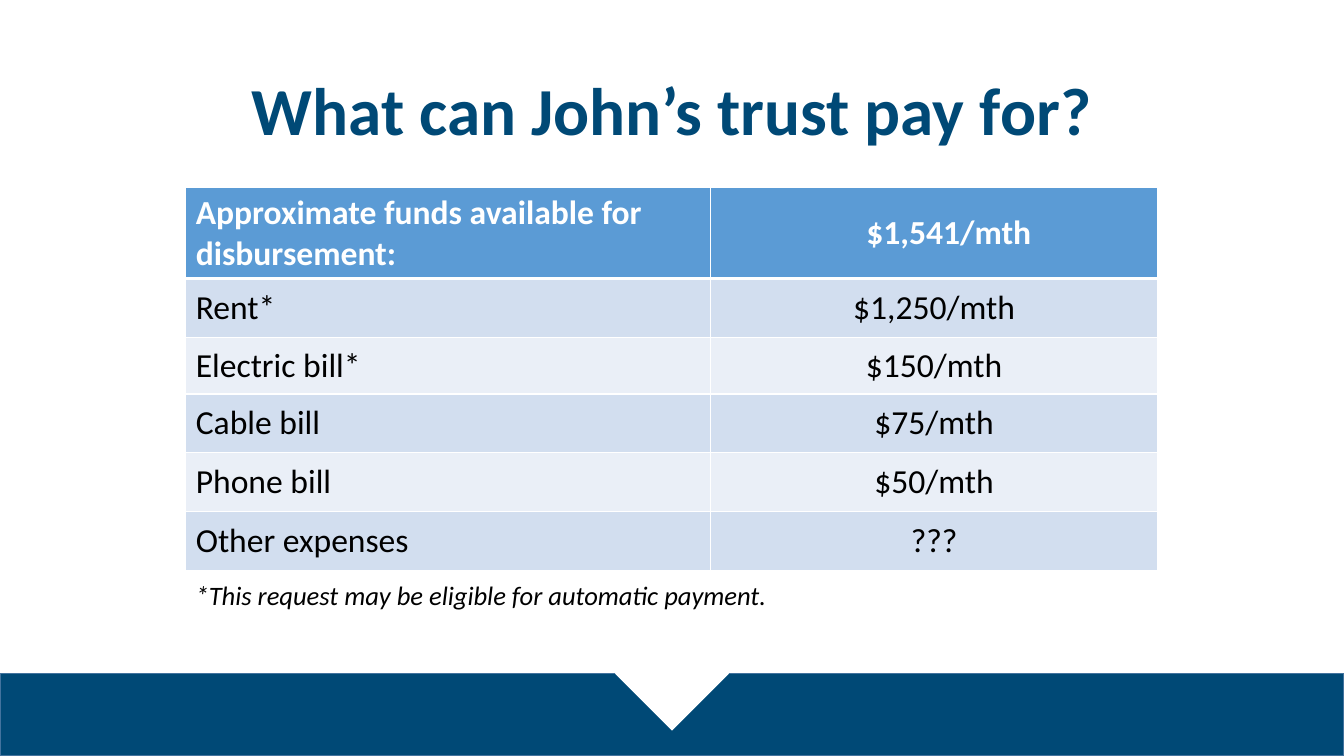
from lxml import etree
from pptx import Presentation
from pptx.dml.color import RGBColor
from pptx.enum.shapes import MSO_SHAPE
from pptx.enum.text import MSO_ANCHOR, PP_ALIGN
from pptx.oxml.ns import qn
from pptx.util import Cm, Pt

RECTANGLE, DIAMOND = MSO_SHAPE.RECTANGLE, MSO_SHAPE.DIAMOND
LEFT, CENTER = PP_ALIGN.LEFT, PP_ALIGN.CENTER
TOP, MIDDLE = MSO_ANCHOR.TOP, MSO_ANCHOR.MIDDLE

FONT = "Calibri"
NAVY, WHITE, BLACK = "004976", "FFFFFF", "000000"
HEADER_BLUE, BANDS = "5B9BD5", ("D2DEEF", "EAEFF7")
SLIDE_WIDTH, SLIDE_HEIGHT = 33.87, 19.05
COLUMN_WIDTHS = (13.22, 11.28)
ROW_HEIGHTS = (2.26, 1.48, 1.43, 1.48, 1.48, 1.48)
EXPENSES = (
    ("Approximate funds available for disbursement:", "$1,541/mth"),
    ("Rent*", "$1,250/mth"),
    ("Electric bill*", "$150/mth"),
    ("Cable bill", "$75/mth"),
    ("Phone bill", "$50/mth"),
    ("Other expenses", "???"),
)


def color(value):
    """Turn a hex string into a colour."""
    return RGBColor.from_string(value)


def write_text(frame, text, size=24, fill=BLACK, bold=False, italic=False,
               align=LEFT, spacing=1.0):
    """Write one formatted paragraph into a text frame."""
    frame.word_wrap = True
    paragraph = frame.paragraphs[0]
    paragraph.alignment = align
    paragraph.line_spacing = spacing
    run = paragraph.add_run()
    run.text = text
    run.font.name = FONT
    run.font.size = Pt(size)
    run.font.bold = bold
    run.font.italic = italic
    run.font.color.rgb = color(fill)


def add_text(slide, text, left, top, width, height, anchor=TOP, **style):
    """Add a text box."""
    frame = slide.shapes.add_textbox(Cm(left), Cm(top), Cm(width), Cm(height)).text_frame
    frame.vertical_anchor = anchor
    write_text(frame, text, **style)


def add_block(slide, kind, left, top, width, height, fill, line=None):
    """Add a plain filled shape with an optional outline."""
    shape = slide.shapes.add_shape(kind, Cm(left), Cm(top), Cm(width), Cm(height))
    shape.shadow.inherit = False
    shape.fill.solid()
    shape.fill.fore_color.rgb = color(fill)
    if line:
        shape.line.color.rgb = color(line)
        shape.line.width = Pt(1)
    else:
        shape.line.fill.background()


def set_borders(cell, bottom_width):
    """Give a cell white borders, with its own width at the bottom."""
    properties = cell._tc.get_or_add_tcPr()
    widths = {"a:lnL": 1, "a:lnR": 1, "a:lnT": 1, "a:lnB": bottom_width}
    for tag, width in widths.items():
        line = etree.SubElement(properties, qn(tag), w=str(Pt(width)))
        fill = etree.SubElement(line, qn("a:solidFill"))
        etree.SubElement(fill, qn("a:srgbClr"), val=WHITE)


def add_expense_table(slide, left, top):
    """Add the table of available funds and monthly expenses."""
    table = slide.shapes.add_table(
        len(EXPENSES), len(COLUMN_WIDTHS), Cm(left), Cm(top),
        Cm(sum(COLUMN_WIDTHS)), Cm(sum(ROW_HEIGHTS))).table
    for column, width in zip(table.columns, COLUMN_WIDTHS):
        column.width = Cm(width)
    for row_index, (row, height) in enumerate(zip(table.rows, ROW_HEIGHTS)):
        row.height = Cm(height)
        header = row_index == 0
        for column_index, cell in enumerate(row.cells):
            set_borders(cell, 3 if header or row_index == 0 else 1)
            cell.fill.solid()
            cell.fill.fore_color.rgb = color(HEADER_BLUE if header else BANDS[(row_index - 1) % 2])
            cell.vertical_anchor = MIDDLE
            write_text(cell.text_frame, EXPENSES[row_index][column_index],
                       fill=WHITE if header else BLACK, bold=header,
                       align=CENTER if column_index else LEFT)
    table.cell(0, 1).margin_left = Cm(1)


def main():
    """Build the slide and save it."""
    presentation = Presentation()
    presentation.slide_width = Cm(SLIDE_WIDTH)
    presentation.slide_height = Cm(SLIDE_HEIGHT)
    slide = presentation.slides.add_slide(presentation.slide_layouts[6])
    add_block(slide, RECTANGLE, 0, 16.97, SLIDE_WIDTH, 2.08, NAVY, line="43739E")
    add_block(slide, DIAMOND, 15.5, 15.54, 2.87, 2.87, WHITE)
    add_text(slide, "What can John’s trust pay for?", 2.33, 1.02, 29.21, 3.68,
             anchor=MIDDLE, size=48, fill=NAVY, bold=True, align=CENTER, spacing=0.9)
    add_expense_table(slide, 4.68, 4.73)
    add_text(slide, "*This request may be eligible for automatic payment.",
             4.68, 14.55, 20.32, 1.12, size=19, italic=True, spacing=0.9)
    presentation.save("out.pptx")


if __name__ == "__main__":
    main()
